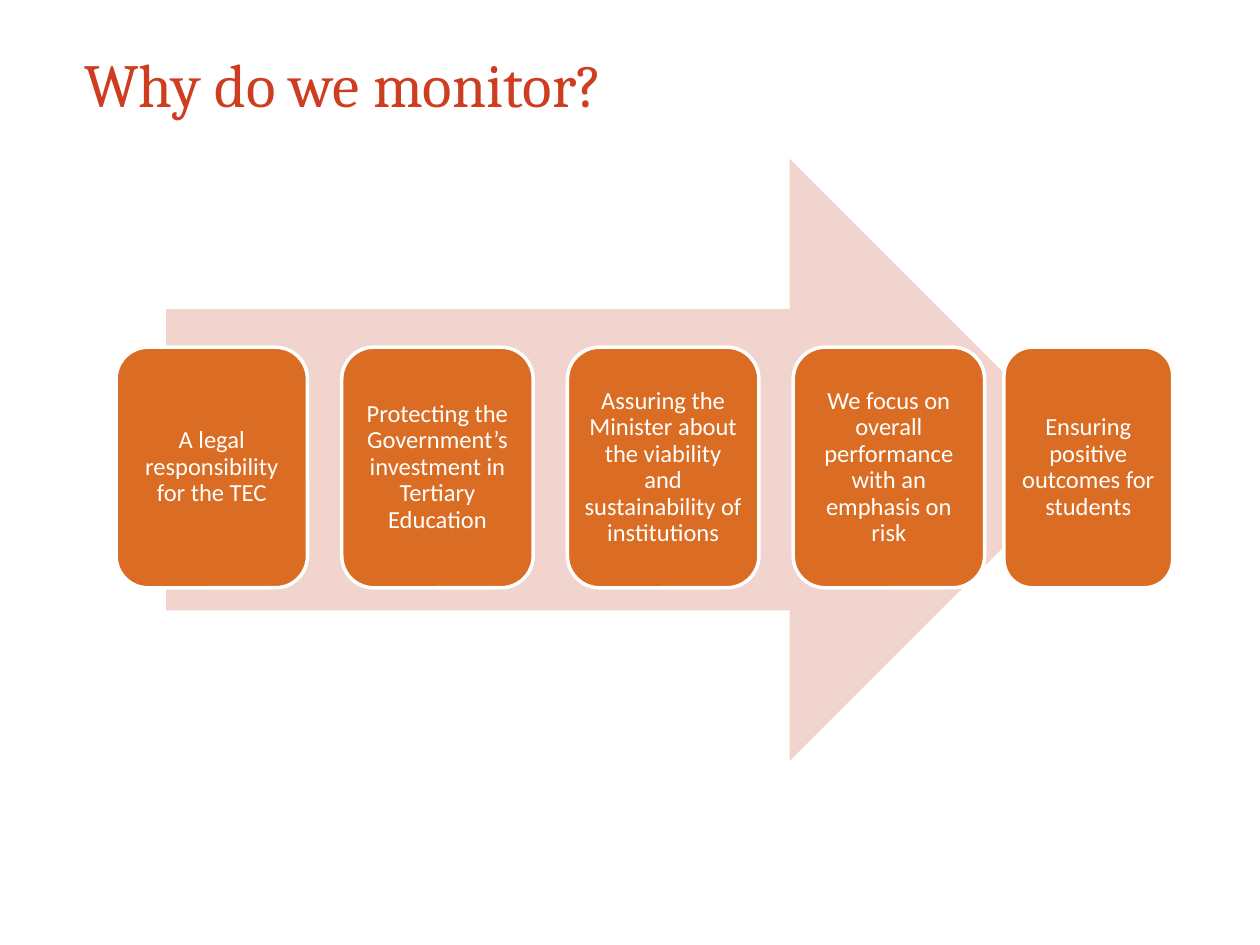
from pptx import Presentation
from pptx.dml.color import RGBColor
from pptx.enum.shapes import MSO_SHAPE
from pptx.enum.text import MSO_ANCHOR, PP_ALIGN
from pptx.util import Cm, Pt

ARROW, BOX = MSO_SHAPE.RIGHT_ARROW, MSO_SHAPE.ROUNDED_RECTANGLE
MIDDLE, CENTER = MSO_ANCHOR.MIDDLE, PP_ALIGN.CENTER

# Content
TITLE = "Why do we monitor?"
REASONS = [
    "A legal responsibility for the TEC",
    "Protecting the Government’s investment in Tertiary Education",
    "Assuring the Minister about the viability and sustainability of institutions",
    "We focus on overall performance with an emphasis on risk",
]
OUTCOME = "Ensuring positive outcomes for students"

# Layout in cm
LEFT, PITCH, TOP = 2.34, 4.55, 7.0
BOX_W, BOX_H = 3.86, 4.85
OUTCOME_LEFT, OUTCOME_W = 20.24, 3.4


def color(value):
    return RGBColor.from_string(value)


def set_text(tf, text, font, size, value, inset=0):
    tf.word_wrap = True
    tf.margin_left = tf.margin_right = tf.margin_top = tf.margin_bottom = Cm(inset)
    tf.text = text
    p = tf.paragraphs[0]
    r = p.runs[0]
    r.font.name, r.font.size = font, Pt(size)
    r.font.color.rgb = color(value)
    return p


def add_filled(s, kind, left, top, width, height, fill):
    sp = s.shapes.add_shape(kind, Cm(left), Cm(top), Cm(width), Cm(height))
    sp.shadow.inherit = False
    sp.fill.solid()
    sp.fill.fore_color.rgb = color(fill)
    sp.line.fill.background()
    return sp


def add_box(s, text, left, width):
    sp = add_filled(s, BOX, left, TOP, width, BOX_H, "DA6D23")
    sp.line.color.rgb = color("FFFFFF")
    sp.line.width = Pt(2)
    tf = sp.text_frame
    tf.vertical_anchor = MIDDLE
    p = set_text(tf, text, "Calibri", 14, "FFFFFF", 0.15)
    p.alignment = CENTER
    p.line_spacing = 0.9


prs = Presentation()
prs.slide_width, prs.slide_height = Cm(25.4), Cm(19.05)
s = prs.slides.add_slide(prs.slide_layouts[6])

# Title
title = s.shapes.add_textbox(Cm(1.7), Cm(1.17), Cm(21.92), Cm(2.57))
p = set_text(title.text_frame, TITLE, "Cambria", 35, "CE3D20")
p.line_spacing = Pt(35)

# Arrow behind the boxes
add_filled(s, ARROW, 3.35, 3.2, 18.64, 12.14, "F1D4CD")

# Reasons at an equal pitch, then the narrower outcome
for i, reason in enumerate(REASONS):
    add_box(s, reason, LEFT + i * PITCH, BOX_W)
add_box(s, OUTCOME, OUTCOME_LEFT, OUTCOME_W)

prs.save("out.pptx")
